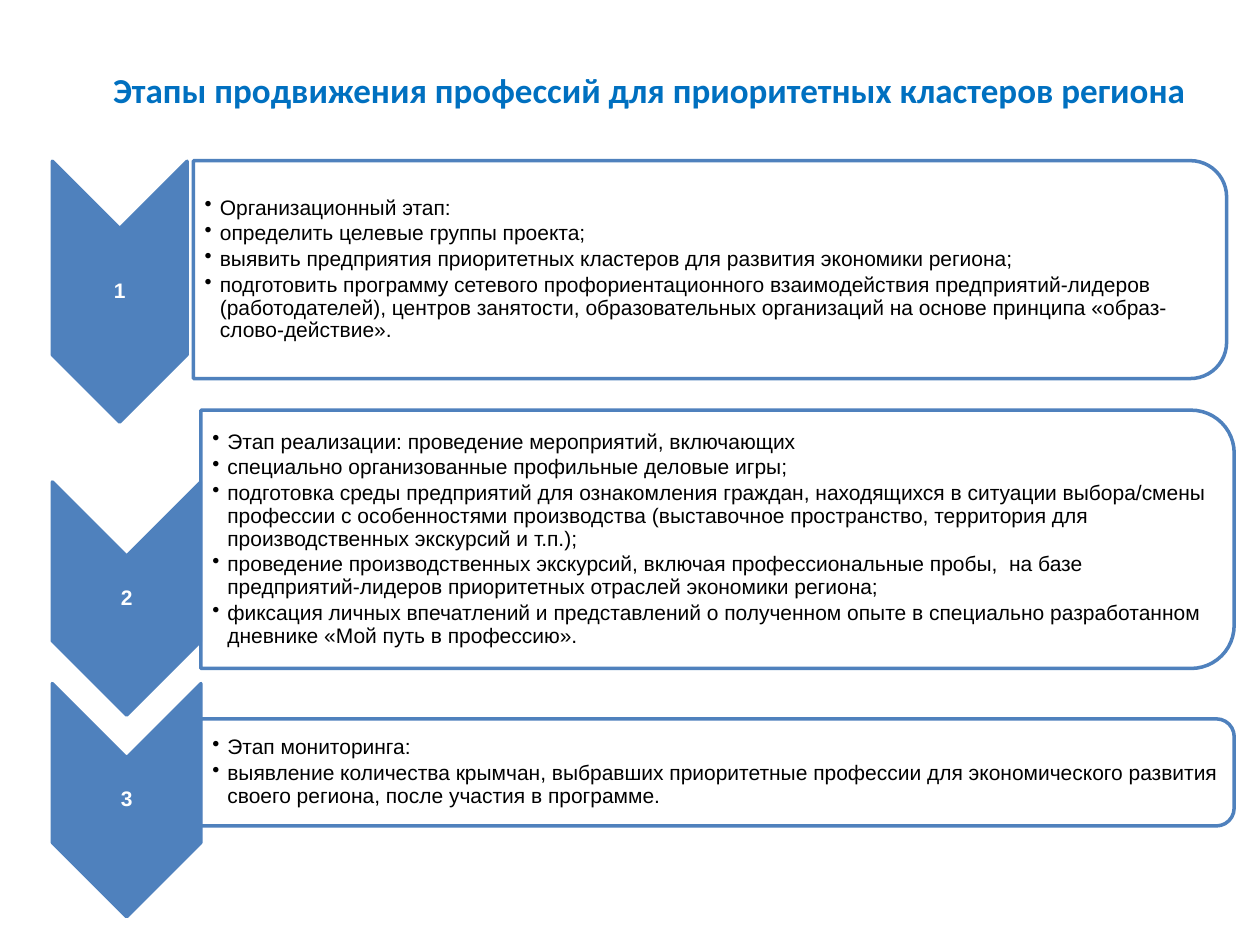
from lxml.etree import SubElement
from pptx import Presentation
from pptx.dml.color import RGBColor
from pptx.enum.shapes import MSO_SHAPE as Shape
from pptx.enum.text import MSO_ANCHOR as Anchor, PP_ALIGN as Align
from pptx.oxml.ns import qn
from pptx.util import Inches, Pt

BLUE = RGBColor(0x4F, 0x81, 0xBD)
TITLE_BLUE = RGBColor(0x00, 0x70, 0xC0)
WHITE = RGBColor(0xFF, 0xFF, 0xFF)
BLACK = RGBColor(0x00, 0x00, 0x00)

deck = Presentation()
deck.slide_width, deck.slide_height = Inches(10), Inches(7.5)
COLUMN = deck.slide_width / 100
ROW = deck.slide_height / 75
page = deck.slides.add_slide(deck.slide_layouts[5])


def add_turned(kind, left, top, width, height, fill):
    middle, center = (left + width / 2) * COLUMN, (top + height / 2) * ROW
    long, short = height * ROW, width * COLUMN
    shape = page.shapes.add_shape(kind, int(middle - long / 2), int(center - short / 2),
                                  int(long), int(short))
    shape.rotation = 90
    shape.shadow.inherit = False
    shape.fill.solid()
    shape.fill.fore_color.rgb = fill
    shape.line.color.rgb = BLUE
    shape.line.width = Pt(2)
    return shape


def add_text(left, top, width, height, lines, color, inset):
    box = page.shapes.add_textbox(int(left * COLUMN), int(top * ROW),
                                  int(width * COLUMN), int(height * ROW))
    frame = box.text_frame
    frame.word_wrap = True
    frame.vertical_anchor = Anchor.MIDDLE
    frame.margin_left = Inches(inset)
    frame.margin_top = frame.margin_right = frame.margin_bottom = Inches(0.01)
    frame.text = "\n".join(lines)
    for para in frame.paragraphs:
        para.font.name, para.font.size = "Arial", Pt(12)
        para.font.color.rgb = color
        para.line_spacing = 0.9
    return frame.paragraphs


title = page.shapes.title
title.left, title.top = int(5 * COLUMN), int(3 * ROW)
title.width, title.height = int(93.1 * COLUMN), int(8.2 * ROW)
title.text_frame.text = "Этапы продвижения профессий для приоритетных кластеров региона"
title.text_frame.vertical_anchor = Anchor.MIDDLE
heading = title.text_frame.paragraphs[0]
heading.alignment = Align.CENTER
heading.font.name, heading.font.size, heading.font.bold = "Calibri", Pt(20), True
heading.font.color.rgb = TITLE_BLUE

ARROW_LEFT, PANEL_WIDTH = 4.15, 82
TEXT_INSET_SHARE = 0.05

stages = [
    ((12.8, 10.7, 20.7), (15.35, 12.75, 17.3), [
        "Организационный этап:",
        "определить целевые группы проекта;",
        "выявить предприятия приоритетных кластеров для развития экономики региона;",
        "подготовить программу сетевого профориентационного взаимодействия "
        "предприятий-лидеров (работодателей), центров занятости, образовательных "
        "организаций на основе принципа «образ-слово-действие».",
    ]),
    ((38.25, 11.8, 18.5), (15.95, 32.55, 20.5), [
        "Этап реализации: проведение мероприятий, включающих",
        "специально организованные профильные деловые игры;",
        "подготовка среды предприятий для ознакомления граждан, находящихся в ситуации "
        "выбора/смены профессии с особенностями производства (выставочное пространство, "
        "территория для производственных экскурсий и т.п.);",
        "проведение производственных экскурсий, включая профессиональные пробы,  на базе "
        "предприятий-лидеров приоритетных отраслей экономики региона;",
        "фиксация личных впечатлений и представлений о полученном опыте в специально "
        "разработанном дневнике «Мой путь в профессию».",
    ]),
    ((54.25, 11.8, 18.5), (15.95, 57.05, 8.5), [
        "Этап мониторинга:",
        "выявление количества крымчан, выбравших приоритетные профессии для "
        "экономического развития своего региона, после участия в программе.",
    ]),
]

for number, (arrow, panel, lines) in enumerate(stages, 1):
    arrow_top, arrow_width, arrow_height = arrow
    add_turned(Shape.CHEVRON, ARROW_LEFT, arrow_top, arrow_width, arrow_height, BLUE)
    label = add_text(ARROW_LEFT, arrow_top + arrow_width / 2, arrow_width,
                     arrow_height - arrow_width, [str(number)], WHITE, 0.01)[0]
    label.alignment = Align.CENTER
    label.font.bold = True

    left, top, height = panel
    card = add_turned(Shape.ROUND_2_SAME_RECTANGLE, left, top, PANEL_WIDTH, height, WHITE)
    fill_color = card.fill._xPr.find(qn("a:solidFill"))[0]
    SubElement(fill_color, qn("a:alpha"), val="90000")

    inset = height * TEXT_INSET_SHARE
    for para in add_text(left, top + inset, PANEL_WIDTH - inset, height - 2 * inset,
                         lines, BLACK, 0.09):
        para.level = 1
        para.space_after = Pt(1.8)
        properties = para._p.get_or_add_pPr()
        properties.set("marL", str(Inches(0.12)))
        properties.set("indent", str(-Inches(0.12)))
        bullet = SubElement(properties, qn("a:buChar"), char="•")
        properties.find(qn("a:defRPr")).addprevious(bullet)

deck.save("out.pptx")
